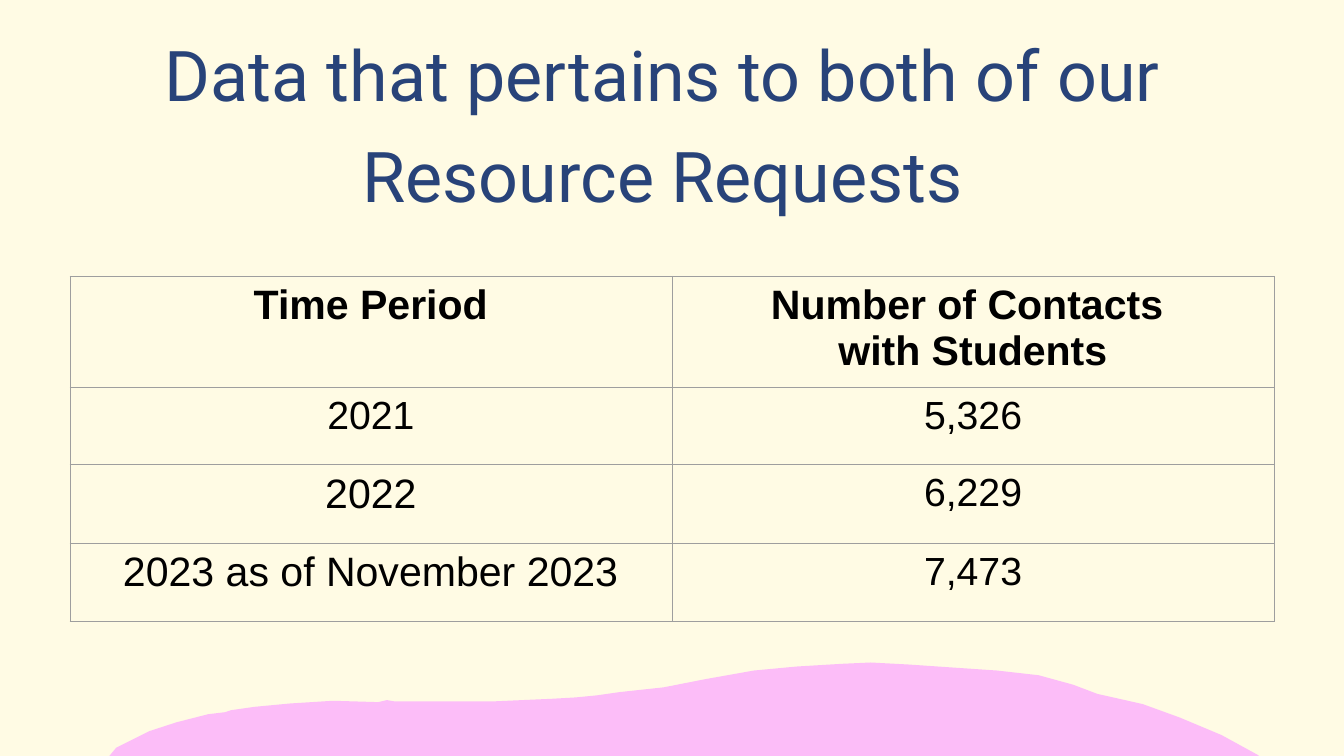
from lxml.etree import SubElement
from pptx import Presentation
from pptx.dml.color import RGBColor
from pptx.enum.text import MSO_ANCHOR as Anchor, MSO_AUTO_SIZE as AutoSize, PP_ALIGN as Align
from pptx.oxml.ns import qn
from pptx.util import Cm, Pt

CONTACTS = [
    (("Time Period", 44), ("Number of Contacts \nwith Students", 44)),
    (("2021", 42), ("5,326", 42)),
    (("2022", 44), ("6,229", 42)),
    (("2023 as of November 2023", 44), ("7,473", 42)),
]
ROW_HEIGHTS = [4.22, 2.9, 2.97, 2.97]
HILL_SPAN = 1810
HILL_OUTLINE = [
    (1, 187), (8, 163), (37, 128), (87, 103), (127, 90), (174, 78), (199, 75),
    (208, 72), (243, 67), (296, 62), (360, 58), (427, 60), (440, 57), (452, 59),
    (596, 59), (686, 55), (721, 53), (752, 50), (780, 46), (787, 45),
    (852, 38), (913, 26), (986, 13), (1050, 7), (1117, 3), (1160, 1), (1216, 4),
    (1348, 13), (1410, 20), (1461, 34), (1498, 48), (1503, 49), (1565, 63),
    (1620, 83), (1682, 109), (1735, 138), (1768, 161), (1788, 184),
    (1804, 210), (1810, 237), (1804, 274), (1782, 309), (1715, 361),
    (1640, 397), (1511, 431), (1402, 450), (1293, 459), (1112, 461),
    (871, 452), (833, 451), (687, 442), (576, 432), (501, 424), (449, 414),
    (435, 413), (296, 393), (227, 376), (112, 323), (42, 270), (4, 216),
]


def paint(fill, colour):
    """Give a fill one solid colour."""
    fill.solid()
    fill.fore_color.rgb = RGBColor.from_string(colour)


def style(paragraph, face, size, colour, bold=False):
    """Centre a paragraph and set its font."""
    paragraph.alignment = Align.CENTER
    font = paragraph.font
    font.name, font.size, font.bold = face, Pt(size), bold
    font.color.rgb = RGBColor.from_string(colour)


def outline_cell(cell, colour, width):
    """Draw a thin border on all four sides of a cell."""
    properties = cell._tc.get_or_add_tcPr()
    for position, side in enumerate(("lnL", "lnR", "lnT", "lnB")):
        line = SubElement(properties, qn(f"a:{side}"), w=str(Pt(width)))
        solid = SubElement(line, qn("a:solidFill"))
        SubElement(solid, qn("a:srgbClr"), val=colour)
        properties.insert(position, line)


def place_heading(slide, left, top, width, height):
    """Place the slide title in its box."""
    title = slide.shapes.title
    title.left, title.top, title.width, title.height = left, top, width, height
    frame = title.text_frame
    frame.margin_left = frame.margin_right = frame.margin_top = frame.margin_bottom = 0
    frame.word_wrap, frame.auto_size = True, AutoSize.NONE
    frame.vertical_anchor = Anchor.TOP
    frame.text = "Data that pertains to both of our Resource Requests"
    heading = frame.paragraphs[0]
    heading.line_spacing = 1.2
    style(heading, "Roboto", 75, "284379")


def place_contacts(slide, left, top, width, height):
    """Place the table of student contacts in its box."""
    table = slide.shapes.add_table(len(CONTACTS), 2, left, top, width, height).table
    table.first_row = table.horz_banding = False
    for row, (row_height, entries) in enumerate(zip(ROW_HEIGHTS, CONTACTS)):
        table.rows[row].height = Cm(row_height)
        for column, (wording, size) in enumerate(entries):
            cell = table.cell(row, column)
            cell.margin_left = cell.margin_right = Cm(0.25)
            cell.margin_top = cell.margin_bottom = Cm(0.25)
            cell.fill.background()
            outline_cell(cell, "9E9E9E", 0.75)
            cell.text = wording
            for paragraph in cell.text_frame.paragraphs:
                style(paragraph, "Arial", size, "000000", bold=row == 0)


def place_hill(slide, left, top, width):
    """Place the pink hill, scaled to the given width."""
    start, *rest = HILL_OUTLINE
    builder = slide.shapes.build_freeform(*start, scale=width / HILL_SPAN)
    builder.add_line_segments(rest, close=True)
    hill = builder.convert_to_shape(left, top)
    hill.shadow.inherit = False
    paint(hill.fill, "FCBDF8")
    hill.line.fill.background()


def main():
    """Build and save the slide."""
    deck = Presentation()
    deck.slide_width, deck.slide_height = Cm(50.8), Cm(28.58)
    slide = deck.slides.add_slide(deck.slide_layouts[5])
    paint(slide.background.fill, "FFFBE4")
    place_heading(slide, Cm(5.89), Cm(0.56), Cm(38.3), Cm(7.7))
    place_contacts(slide, Cm(2.64), Cm(10.44), Cm(45.52), Cm(sum(ROW_HEIGHTS)))
    place_hill(slide, Cm(3.45), Cm(25.02), Cm(45.97))
    deck.save("out.pptx")


if __name__ == "__main__":
    main()
